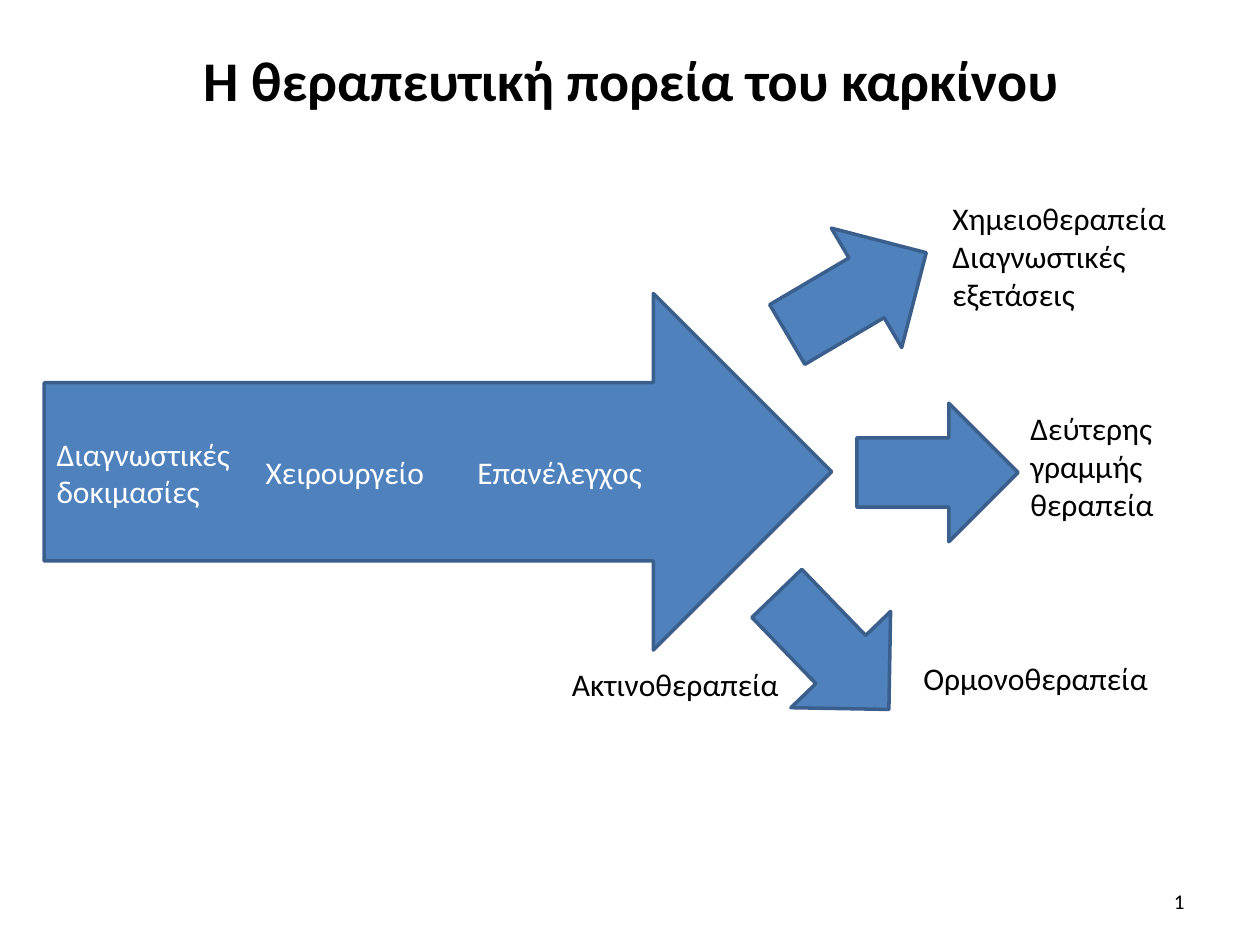
from pptx import Presentation
from pptx.dml.color import RGBColor
from pptx.enum.shapes import MSO_SHAPE
from pptx.enum.text import MSO_ANCHOR, PP_ALIGN
from pptx.util import Inches, Pt

RIGHT_ARROW = MSO_SHAPE.RIGHT_ARROW
TOP, MIDDLE = MSO_ANCHOR.TOP, MSO_ANCHOR.MIDDLE
LEFT, CENTER, RIGHT = PP_ALIGN.LEFT, PP_ALIGN.CENTER, PP_ALIGN.RIGHT

COLORS = {"text": "000000", "on_arrow": "FFFFFF", "arrow": "4F81BD", "outline": "3A5F8C"}


class SlideBuilder:
    """Holds the shared style and the slide being built."""

    font = "Calibri"
    body_size = 18
    outline_width = 2

    def __init__(self, slide):
        self.slide = slide

    def color(self, key):
        return RGBColor.from_string(COLORS[key])

    def text(self, box, lines, color="text", size=body_size, bold=False,
             align=LEFT, anchor=TOP):
        frame = self.slide.shapes.add_textbox(*map(Inches, box)).text_frame
        frame.word_wrap = True
        frame.vertical_anchor = anchor
        for index, line in enumerate(lines):
            paragraph = frame.add_paragraph() if index else frame.paragraphs[0]
            paragraph.alignment = align
            run = paragraph.add_run()
            run.text = line
            run.font.name = self.font
            run.font.size = Pt(size)
            run.font.bold = bold
            run.font.color.rgb = self.color(color)

    def arrow(self, box, rotation=0):
        arrow = self.slide.shapes.add_shape(RIGHT_ARROW, *map(Inches, box))
        arrow.rotation = rotation
        arrow.shadow.inherit = False
        arrow.fill.solid()
        arrow.fill.fore_color.rgb = self.color("arrow")
        arrow.line.color.rgb = self.color("outline")
        arrow.line.width = Pt(self.outline_width)


def main():
    prs = Presentation()
    prs.slide_width, prs.slide_height = Inches(10), Inches(7.5)
    builder = SlideBuilder(prs.slides.add_slide(prs.slide_layouts[6]))

    # Title and page number
    builder.text((0.51, 0.13, 9, 0.99), ["Η θεραπευτική πορεία του καρκίνου"],
                 size=32, bold=True, align=CENTER, anchor=MIDDLE)
    builder.text((7.17, 6.95, 2.33, 0.4), ["1"], size=12, align=RIGHT, anchor=MIDDLE)

    # Main pathway arrow and its three branches
    builder.arrow((0.35, 2.33, 6.25, 2.83))
    for left, top, rotation in [(6.16, 1.78, 329.5), (6.8, 3.2, 0), (5.97, 4.62, 46)]:
        builder.arrow((left, top, 1.28, 1.1), rotation)

    # Stages inside the main arrow
    stages = [
        (0.35, 3.4, 0.71, "Διαγνωστικές δοκιμασίες"),
        (2.01, 3.55, 0.4, "Χειρουργείο"),
        (3.69, 3.55, 0.4, "Επανέλεγχος"),
    ]
    for left, top, height, stage in stages:
        builder.text((left, top, 2.19, height), [stage], color="on_arrow")

    # Treatments around the branches
    treatments = [
        ((7.46, 1.53, 2.19, 1.01), ["Χημειοθεραπεία", "Διαγνωστικές εξετάσεις"]),
        ((8.08, 3.2, 1.9, 1.01), ["Δεύτερης γραμμής θεραπεία"]),
        ((7.23, 5.18, 2.1, 0.4), ["Ορμονοθεραπεία"]),
        ((4.44, 5.23, 2.1, 0.4), ["Ακτινοθεραπεία"]),
    ]
    for box, lines in treatments:
        builder.text(box, lines)

    prs.save("out.pptx")


if __name__ == "__main__":
    main()
